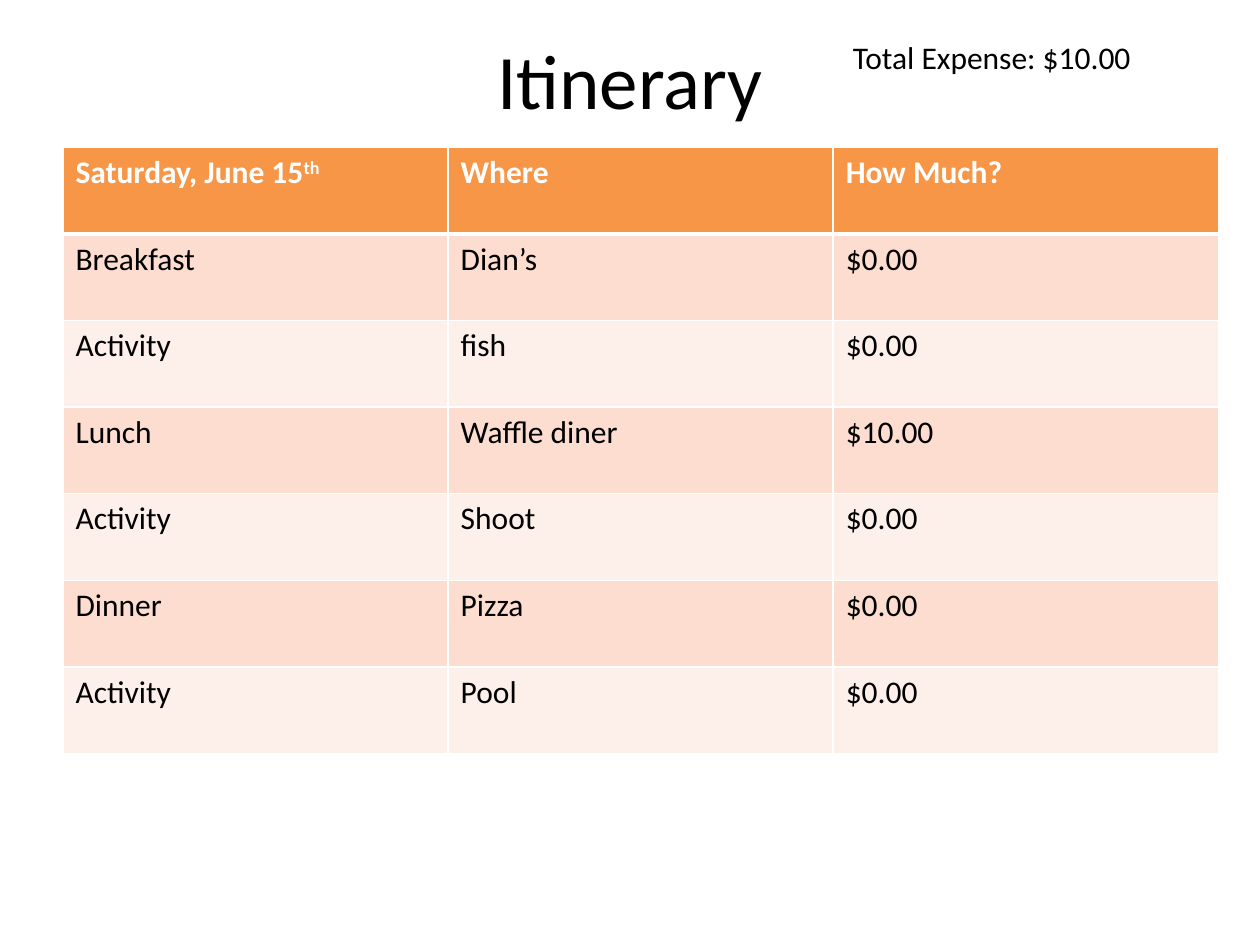
from lxml import etree
from pptx import Presentation
from pptx.dml.color import RGBColor
from pptx.enum.text import MSO_ANCHOR, MSO_AUTO_SIZE, PP_ALIGN
from pptx.oxml.ns import qn
from pptx.util import Inches, Pt

CENTER = PP_ALIGN.CENTER
MIDDLE = MSO_ANCHOR.MIDDLE
GROW = MSO_AUTO_SIZE.SHAPE_TO_FIT_TEXT
TITLE_ONLY = 5
WHITE, BLACK, ORANGE = "FFFFFF", "000000", "F79646"
BANDS = ("FCDDCF", "FDEFE9")

HEADER = ("Saturday, June 15", "Where", "How Much?")
ITINERARY = (
    ("Breakfast", "Dian’s", "$0.00"),
    ("Activity", "fish", "$0.00"),
    ("Lunch", "Waffle diner", "$10.00"),
    ("Activity", "Shoot", "$0.00"),
    ("Dinner", "Pizza", "$0.00"),
    ("Activity", "Pool", "$0.00"),
)


def color(value):
    return RGBColor.from_string(value)


class ItinerarySlide:
    """Holds the text style and the current slide, and adds its elements."""

    def __init__(self, presentation):
        self.slide = presentation.slides.add_slide(presentation.slide_layouts[TITLE_ONLY])
        self.style = {"name": "Calibri", "size": Pt(18), "bold": False}

    def add_text(self, paragraph, text, font_color=BLACK, **changes):
        run = paragraph.add_run()
        run.text = text
        for name, value in {**self.style, **changes}.items():
            setattr(run.font, name, value)
        run.font.color.rgb = color(font_color)
        return run

    def title(self, text, left, top, width, height):
        shape = self.slide.shapes.title
        box = {"left": left, "top": top, "width": width, "height": height}
        for name, value in box.items():
            setattr(shape, name, Inches(value))
        shape.text_frame.vertical_anchor = MIDDLE
        paragraph = shape.text_frame.paragraphs[0]
        paragraph.alignment = CENTER
        self.add_text(paragraph, text, size=Pt(44))

    def label(self, text, left, top, width, height):
        shape = self.slide.shapes.add_textbox(*map(Inches, (left, top, width, height)))
        shape.text_frame.word_wrap = True
        shape.text_frame.auto_size = GROW
        self.add_text(shape.text_frame.paragraphs[0], text)

    def border(self, cell, side, points):
        properties = cell._tc.get_or_add_tcPr()
        line = etree.SubElement(properties, qn(f"a:ln{side}"), w=str(Pt(points)))
        fill = etree.SubElement(line, qn("a:solidFill"))
        etree.SubElement(fill, qn("a:srgbClr"), val=WHITE)

    def table(self, rows, left, top, width, height):
        box = map(Inches, (left, top, width, height))
        table = self.slide.shapes.add_table(len(rows), len(rows[0]), *box).table
        for row_index, row in enumerate(rows):
            is_header = row_index == 0
            fill = ORANGE if is_header else BANDS[(row_index - 1) % 2]
            widths = {"L": 1, "R": 1, "T": 3 if row_index == 1 else 1, "B": 3 if is_header else 1}
            for column_index, text in enumerate(row):
                cell = table.cell(row_index, column_index)
                for side, points in widths.items():
                    self.border(cell, side, points)
                cell.fill.solid()
                cell.fill.fore_color.rgb = color(fill)
                font_color = WHITE if is_header else BLACK
                self.add_text(cell.text_frame.paragraphs[0], text, font_color, bold=is_header)
        return table

    def superscript(self, paragraph, text, font_color):
        run = self.add_text(paragraph, text, font_color, bold=True)
        run._r.get_or_add_rPr().set("baseline", "30000")


def main():
    presentation = Presentation()
    presentation.slide_width = Inches(10)
    presentation.slide_height = Inches(7.5)
    page = ItinerarySlide(presentation)
    page.title("Itinerary", 0.5, 0, 9, 1.25)
    page.label("Total Expense: $10.00", 6.67, 0.25, 3.08, 0.4)
    table = page.table((HEADER, *ITINERARY), 0.5, 1.17, 9.17, 4.81)
    page.superscript(table.cell(0, 0).text_frame.paragraphs[0], "th", WHITE)
    presentation.save("out.pptx")


if __name__ == "__main__":
    main()
